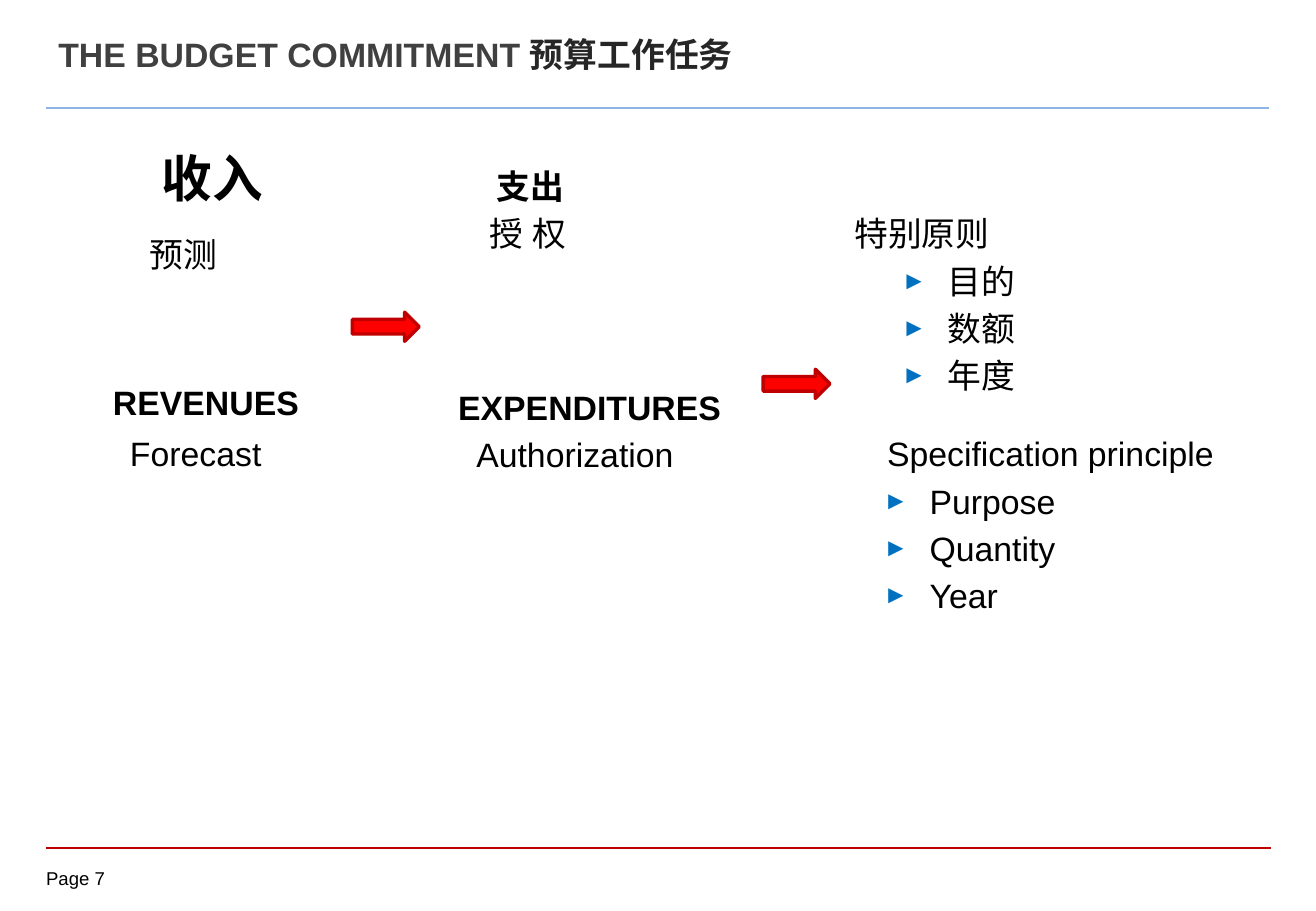
import pptx
import pptx.util
import pptx.dml.color
import pptx.enum.shapes
import pptx.enum.text
import pptx.oxml.ns
from dataclasses import dataclass
from lxml import etree

Inches = pptx.util.Inches
Pt = pptx.util.Pt


@dataclass(frozen=True)
class Theme:
    font: str = "Arial"
    text: str = "000000"
    title: str = "404040"
    title_chinese: str = "262626"
    title_rule: str = "8EB4E3"
    footer_rule: str = "C00000"
    arrow_fill: str = "FF0000"
    arrow_line: str = "C00000"
    bullet: str = "0070C0"
    normal: int = 20
    large: int = 30
    footer: int = 11
    pitch: float = 1.4


THEME = Theme()


def rgb(value):
    return pptx.dml.color.RGBColor.from_string(value)


def add_element(parent, tag, **attributes):
    return etree.SubElement(parent, pptx.oxml.ns.qn(tag), **attributes)


def style_font(paragraph, size, bold=False, color=THEME.text):
    font = paragraph.font
    font.name, font.size, font.bold = THEME.font, Pt(size), bold
    font.color.rgb = rgb(color)
    # Chinese characters share the Latin typeface
    add_element(font._element, "a:ea", typeface=THEME.font)


def prepare_frame(shape, box):
    shape.left, shape.top, shape.width, shape.height = map(Inches, box)
    frame = shape.text_frame
    frame.word_wrap = True
    frame.auto_size = pptx.enum.text.MSO_AUTO_SIZE.NONE
    frame.margin_left = frame.margin_right = 0
    frame.margin_top = frame.margin_bottom = 0
    return frame


def add_line(frame, index, text, indent=0, size=THEME.normal, bold=False,
             before=0, bullet=False):
    """Write one line; a bullet hangs to the left of its indent."""
    paragraph = frame.add_paragraph() if index else frame.paragraphs[0]
    paragraph.text = text
    paragraph.alignment = pptx.enum.text.PP_ALIGN.LEFT
    paragraph.line_spacing = Pt(size * THEME.pitch)
    paragraph.space_before = Pt(before)
    paragraph.space_after = Pt(0)
    properties = paragraph._p.get_or_add_pPr()
    hang = 0.38 if bullet else 0
    properties.set("marL", str(Inches(indent + hang)))
    properties.set("indent", str(-Inches(hang)))
    if bullet:
        color = add_element(properties, "a:buClr")
        add_element(color, "a:srgbClr", val=THEME.bullet)
        add_element(properties, "a:buSzPct", val="75000")
        add_element(properties, "a:buFont", typeface=THEME.font)
        add_element(properties, "a:buChar", char="►")
    else:
        add_element(properties, "a:buNone")
    style_font(paragraph, size, bold)


def add_rule(slide, left, right, y, color, width):
    rule = slide.shapes.add_connector(
        pptx.enum.shapes.MSO_CONNECTOR.STRAIGHT,
        Inches(left), Inches(y), Inches(right), Inches(y))
    rule.line.color.rgb = rgb(color)
    rule.line.width = Pt(width)
    add_element(rule._element.spPr, "a:effectLst")


def fill_title(slide, box):
    left, top, width, height = box
    title = slide.shapes.title
    title.left, title.top, title.width, title.height = map(Inches, box)
    frame = title.text_frame
    frame.auto_size = pptx.enum.text.MSO_AUTO_SIZE.NONE
    frame.vertical_anchor = pptx.enum.text.MSO_ANCHOR.MIDDLE
    paragraph = frame.paragraphs[0]
    paragraph.alignment = pptx.enum.text.PP_ALIGN.LEFT
    style_font(paragraph, THEME.normal, True, THEME.title)
    paragraph.add_run().text = "THE BUDGET COMMITMENT "
    chinese = paragraph.add_run()
    chinese.text = "预算工作任务"
    chinese.font.color.rgb = rgb(THEME.title_chinese)
    add_rule(slide, left, left + 10.06, top + 0.8, THEME.title_rule, 1.5)


def add_budget_side(slide, box, heading, action, heading_indent=0,
                    action_indent=0, size=THEME.normal, before=0):
    """Revenue or expenditure heading with the act that belongs to it."""
    shape = slide.shapes.add_textbox(*map(Inches, box))
    frame = prepare_frame(shape, box)
    add_line(frame, 0, heading, heading_indent, size, bold=True)
    add_line(frame, 1, action, action_indent, before=before)


def fill_principle(placeholder, box, heading, criteria, heading_indent=0,
                   criteria_indent=0):
    frame = prepare_frame(placeholder, box)
    frame.vertical_anchor = pptx.enum.text.MSO_ANCHOR.TOP
    add_line(frame, 0, heading, heading_indent)
    for index, criterion in enumerate(criteria, 1):
        add_line(frame, index, criterion, criteria_indent, bullet=True)


def add_arrow(slide, box):
    arrow = slide.shapes.add_shape(
        pptx.enum.shapes.MSO_SHAPE.RIGHT_ARROW, *map(Inches, box))
    arrow.shadow.inherit = False
    arrow.fill.solid()
    arrow.fill.fore_color.rgb = rgb(THEME.arrow_fill)
    arrow.line.color.rgb = rgb(THEME.arrow_line)
    arrow.line.width = Pt(2)


def add_footer(slide, box):
    left, top, width, height = box
    add_rule(slide, left, left + 10.08, top - 0.16, THEME.footer_rule, 1)
    frame = prepare_frame(slide.shapes.add_textbox(*map(Inches, box)), box)
    frame.paragraphs[0].text = "Page 7"
    style_font(frame.paragraphs[0], THEME.footer)


def build_budget_slide(presentation):
    slide = presentation.slides.add_slide(presentation.slide_layouts[3])
    fill_title(slide, (0.38, 0.09, 9.92, 0.71))

    # Revenues and expenditures, in Chinese and in English
    add_budget_side(slide, (1.23, 1.13, 1.8, 1.2), "收入", "预测",
                    heading_indent=0.1, size=THEME.large, before=11)
    add_budget_side(slide, (4.03, 1.31, 2, 0.8), "支出", "授 权",
                    heading_indent=0.06)
    add_budget_side(slide, (0.93, 3.09, 2.2, 0.85), "REVENUES", "Forecast",
                    action_indent=0.14, before=2)
    add_budget_side(slide, (3.77, 3.13, 2.6, 0.8), "EXPENDITURES",
                    "Authorization", action_indent=0.15)

    # Specification principle
    fill_principle(slide.placeholders[1], (7.03, 1.7, 3.2, 1.6), "特别原则",
                   ("目的", "数额", "年度"), criteria_indent=0.39)
    fill_principle(slide.placeholders[2], (7.27, 3.51, 3.2, 1.6),
                   "Specification principle", ("Purpose", "Quantity", "Year"),
                   heading_indent=0.03)

    # Flow from left to right
    for left, top in ((2.9, 2.57), (6.28, 3.04)):
        add_arrow(slide, (left, top, 0.55, 0.24))

    add_footer(slide, (0.38, 7.14, 0.73, 0.22))


def main():
    presentation = pptx.Presentation()
    presentation.slide_width = Inches(10.83)
    presentation.slide_height = Inches(7.5)
    build_budget_slide(presentation)
    presentation.save("out.pptx")


if __name__ == "__main__":
    main()
